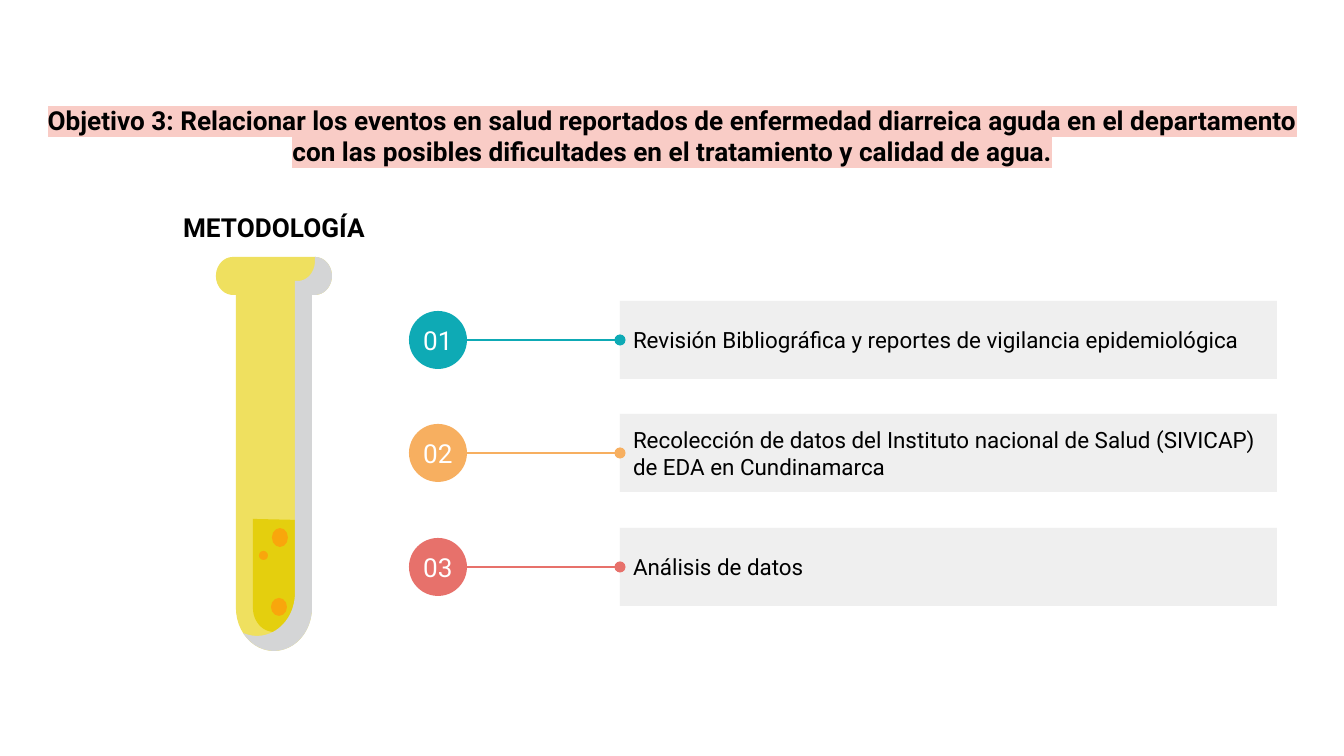
from math import cos, radians, sin

from lxml.etree import SubElement
from pptx import Presentation
from pptx.dml.color import RGBColor
from pptx.enum.shapes import MSO_CONNECTOR, MSO_SHAPE
from pptx.enum.text import MSO_ANCHOR, MSO_AUTO_SIZE, PP_ALIGN
from pptx.oxml.ns import qn
from pptx.util import Inches, Pt

PX = Inches(10) / 1344
FONT = "Roboto"
BLACK, WHITE, GREY = "000000", "FFFFFF", "EFEFEF"
color = RGBColor.from_string


def paint(shape, fill):
    """Give the shape a flat fill with neither outline nor shadow."""
    shape.shadow.inherit = False
    shape.fill.solid()
    shape.fill.fore_color.rgb = color(fill)
    shape.line.fill.background()


def arc(center_x, center_y, radius_x, radius_y, start, end):
    """Return points along an elliptical arc; degrees run clockwise from the right."""
    steps = 24
    angles = [radians(start + (end - start) * i / steps) for i in range(steps + 1)]
    return [(center_x + radius_x * cos(a), center_y + radius_y * sin(a)) for a in angles]


presentation = Presentation()
presentation.slide_width = round(1344 * PX)
presentation.slide_height = round(756 * PX)
slide = presentation.slides.add_slide(presentation.slide_layouts[5])
shapes = slide.shapes

# Title and heading
title = shapes.title
title.left, title.top, title.width, title.height = [round(v * PX) for v in (27, 91, 1291, 106)]
heading = shapes.add_textbox(*[round(v * PX) for v in (132, 198, 284, 59)])

# Each label: shape, text, size, colour, bold, alignment, anchor, margin in px
labels = [
    (title, "Objetivo 3: Relacionar los eventos en salud reportados de enfermedad diarreica aguda "
            "en el departamento con las posibles dificultades en el tratamiento y calidad de agua.",
     14, BLACK, True, PP_ALIGN.CENTER, MSO_ANCHOR.TOP, 13),
    (heading, "METODOLOGÍA", 14, BLACK, True, PP_ALIGN.CENTER, MSO_ANCHOR.TOP, 13),
]

# Numbered steps
steps = [
    ("Revisión Bibliográfica y reportes de vigilancia epidemiológica", "0EAAB5"),
    ("Recolección de datos del Instituto nacional de Salud (SIVICAP) de EDA en Cundinamarca", "F7AF60"),
    ("Análisis de datos", "E7716B"),
]
for index, (step_text, accent) in enumerate(steps):
    top = 301 + round(113.4 * index)
    middle = round((top + 39) * PX)
    box = shapes.add_shape(MSO_SHAPE.RECTANGLE, *[round(v * PX) for v in (620, top, 657, 78)])
    paint(box, GREY)

    line = shapes.add_connector(MSO_CONNECTOR.STRAIGHT, round(433 * PX), middle, round(620 * PX), middle)
    line.end_connect(box, 1)
    line.line.color.rgb = color(accent)
    line.line.width = Pt(1.5)
    SubElement(line.line._get_or_add_ln(), qn("a:tailEnd"), type="oval")
    SubElement(line._element.spPr, qn("a:effectLst"))

    circle = shapes.add_shape(MSO_SHAPE.OVAL, *[round(v * PX) for v in (409, top + 10, 58, 58)])
    paint(circle, accent)
    labels += [
        (box, step_text, 12, BLACK, False, PP_ALIGN.LEFT, MSO_ANCHOR.MIDDLE, 13),
        (circle, f"{index + 1:02}", 14, WHITE, False, PP_ALIGN.CENTER, MSO_ANCHOR.MIDDLE, 0),
    ]

# Test tube
right_lip = arc(315, 276, 17, 19, -90, 90) + [(312, 295)]
left_lip = [(236, 295)] + arc(233, 276, 17, 19, 90, 270)
tube = right_lip + arc(274, 608, 38, 43, 0, 180) + left_lip
liquid = [(253, 519), (295, 520)] + arc(274, 608, 21, 24, 0, 180)
shade = (right_lip + arc(274, 608, 38, 43, 0, 144) + arc(257, 593, 38, 43, 111, 0)
         + [(295, 281)] + arc(298, 261, 17, 20, 90, 0))
for outline, fill in [(tube, "EFE05F"), (liquid, "E4CF0E"), (shade, "D4D5D6")]:
    points = [(round(x * PX), round(y * PX)) for x, y in outline]
    builder = shapes.build_freeform(*points[0])
    builder.add_line_segments(points[1:], close=True)
    paint(builder.convert_to_shape(), fill)

for bubble_place in [(259, 551, 9, 9), (272, 528, 16, 19), (271, 598, 16, 18)]:
    bubble = shapes.add_shape(MSO_SHAPE.OVAL, *[round(v * PX) for v in bubble_place])
    paint(bubble, "F9A60C")

# Text
for shape, text, size, text_color, bold, alignment, anchor, margin in labels:
    frame = shape.text_frame
    frame.text = text
    frame.word_wrap = True
    frame.auto_size = MSO_AUTO_SIZE.NONE
    frame.vertical_anchor = anchor
    frame.margin_left = frame.margin_right = round(margin * PX)
    frame.margin_top = frame.margin_bottom = round(margin * PX)
    paragraph = frame.paragraphs[0]
    paragraph.alignment = alignment
    font = paragraph.runs[0].font
    font.name, font.size, font.bold = FONT, Pt(size), bold
    font.color.rgb = color(text_color)

# Title highlight, which must follow the text fill
properties = title.text_frame.paragraphs[0].runs[0].font._element
highlight = SubElement(properties, qn("a:highlight"))
SubElement(highlight, qn("a:srgbClr"), val="F9CCC6")
properties.find(qn("a:solidFill")).addnext(highlight)

presentation.save("out.pptx")
